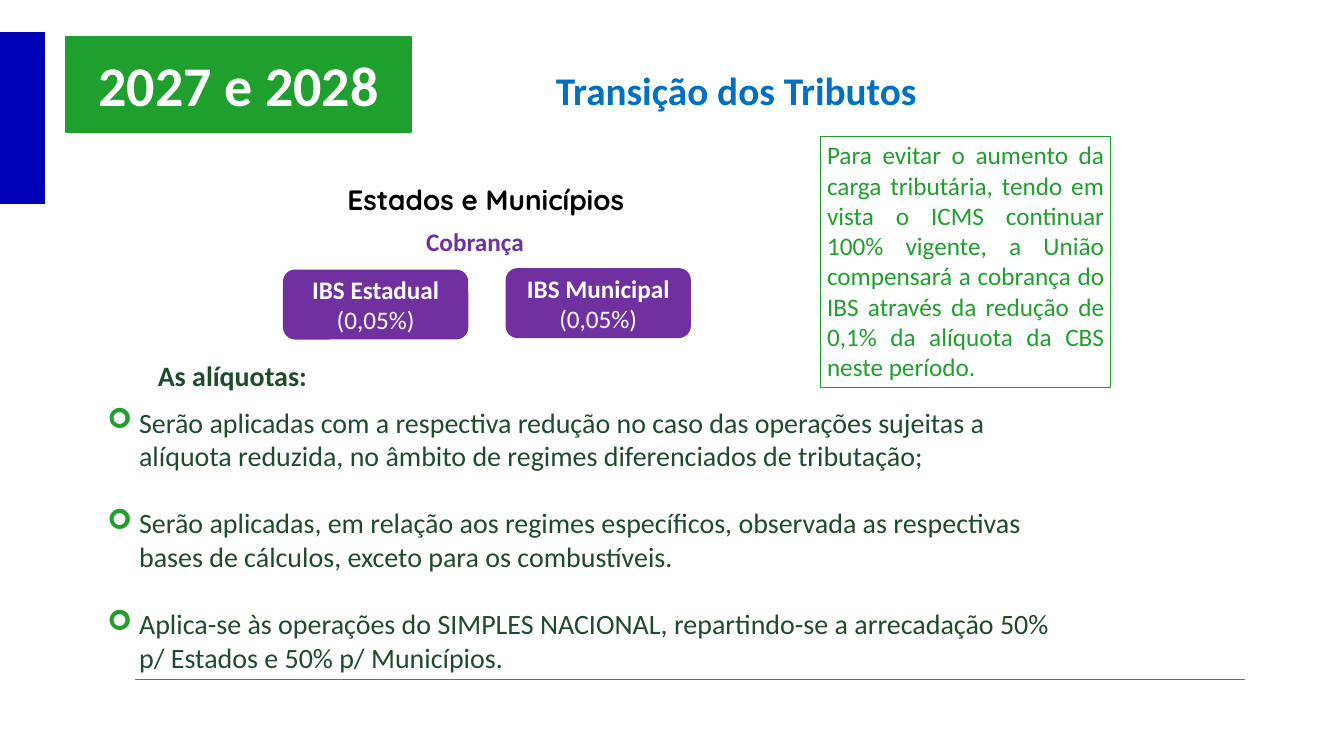
from dataclasses import dataclass
from lxml.etree import SubElement as Sub
from pptx import Presentation as Deck
from pptx.dml.color import RGBColor as RGB
from pptx.enum.shapes import MSO_CONNECTOR as Conn, MSO_SHAPE as Kind
from pptx.enum.text import MSO_ANCHOR as Anchor, PP_ALIGN as Align
from pptx.oxml.ns import qn
from pptx.util import Pt


@dataclass(frozen=True)
class Theme:
    green: str = "1F9F2D"
    dark: str = "1F4B2D"
    blue: str = "0070C0"
    navy: str = "0000B7"
    purple: str = "7030A0"
    white: str = "FFFFFF"
    black: str = "000000"
    font: str = "Calibri"
    round: str = "Quicksand"
    huge: int = 60
    large: int = 42
    body: int = 30
    small: int = 27


T = Theme()


def tint(hue):
    return RGB.from_string(hue)


def write(shape, *lines, size=T.body, hue=T.dark, font=T.font, bold=False,
          align=Align.LEFT, anchor=Anchor.TOP, rest="", gap=0, mark=None):
    frame = shape.text_frame
    frame.word_wrap = True
    frame.vertical_anchor = anchor
    for i, line in enumerate(lines):
        par = frame.add_paragraph() if i else frame.paragraphs[0]
        par.alignment = align
        if i and gap:
            par.space_before = Pt(gap)
        for part, heavy in ((line, bold), (rest, False)):
            if part:
                run = par.add_run()
                run.text = part
                face = run.font
                face.name, face.size, face.bold = font, Pt(size), heavy
                face.color.rgb = tint(hue)
        if mark:
            props = par._p.get_or_add_pPr()
            props.set("marL", str(Pt(34)))
            props.set("indent", str(-Pt(34)))
            shade = Sub(props, qn("a:buClr"))
            Sub(shade, qn("a:srgbClr"), val=T.green)
            Sub(props, qn("a:buFont"), typeface="Wingdings")
            Sub(props, qn("a:buChar"), char=mark)


def label(slide, x, y, w, h, *lines, **style):
    box = slide.shapes.add_textbox(Pt(x), Pt(y), Pt(w), Pt(h))
    write(box, *lines, **style)


def block(slide, x, y, w, h, kind=Kind.RECTANGLE, fill=None, edge=None, width=1):
    shape = slide.shapes.add_shape(kind, Pt(x), Pt(y), Pt(w), Pt(h))
    shape.shadow.inherit = False
    if fill:
        shape.fill.solid()
        shape.fill.fore_color.rgb = tint(fill)
    else:
        shape.fill.background()
    if edge:
        shape.line.color.rgb = tint(edge)
        shape.line.width = Pt(width)
    else:
        shape.line.fill.background()
    return shape


def rule(slide, x, y, w):
    line = slide.shapes.add_connector(Conn.STRAIGHT, Pt(x), Pt(y), Pt(x + w), Pt(y))
    line.line.color.rgb = tint(T.green)
    line.line.width = Pt(0.75)
    Sub(line._element.spPr, qn("a:effectLst"))


def head(slide, x, y):
    block(slide, x, y, 48, 184, fill=T.navy)
    badge = block(slide, x + 71, y + 5.5, 369.5, 101, fill=T.green, edge=T.green, width=2)
    write(badge, "2027 e 2028", size=T.huge, hue=T.white, bold=True,
          align=Align.CENTER, anchor=Anchor.MIDDLE)
    label(slide, x + 464.5, y + 33, 649, 58, "Transição dos Tributos",
          size=T.large, hue=T.blue, bold=True, align=Align.CENTER)


def levy(slide, x, y):
    label(slide, x + 61, y, 325, 44, "Estados e Municípios",
          hue=T.black, font=T.round, bold=True)
    label(slide, x + 145.5, y + 47.5, 240, 40, "Cobrança",
          size=T.small, hue=T.purple, bold=True)
    for name, dx, dy in (("IBS Estadual ", 0, 98), ("IBS Municipal ", 238.5, 96.5)):
        card = block(slide, x + dx, y + dy, 197, 73.5, Kind.ROUNDED_RECTANGLE,
                     T.purple, T.purple, 1.5)
        write(card, name, rest="(0,05%)", size=T.small, hue=T.white, bold=True,
              align=Align.CENTER, anchor=Anchor.MIDDLE)


def note(slide, x, y, w, h):
    box = block(slide, x, y, w, h, edge=T.green, width=0.75)
    write(box, "Para evitar o aumento da carga tributária, tendo em vista o ICMS "
          "continuar 100% vigente, a União compensará a cobrança do IBS através da "
          "redução de 0,1% da alíquota da CBS neste período.",
          size=T.small, hue=T.green, align=Align.JUSTIFY)


def rates(slide, x, y, w):
    label(slide, x + 54, y, 240, 44, "As alíquotas:", bold=True)
    label(slide, x, y + 49.5, w, 330,
          "Serão aplicadas com a respectiva redução no caso das operações sujeitas a "
          "alíquota reduzida, no âmbito de regimes diferenciados de tributação;",
          "Serão aplicadas, em relação aos regimes específicos, observada as "
          "respectivas bases de cálculos, exceto para os combustíveis.",
          "Aplica-se às operações do SIMPLES NACIONAL, repartindo-se a arrecadação "
          "50% p/ Estados e 50% p/ Municípios.",
          gap=36, mark="➢")


def main():
    deck = Deck()
    deck.slide_width, deck.slide_height = Pt(1440), Pt(810)
    slide = deck.slides.add_slide(deck.slide_layouts[6])
    rule(slide, 145, 728, 1188.5)
    head(slide, 0, 34.5)
    levy(slide, 304, 191.5)
    note(slide, 879, 146, 311, 269)
    rates(slide, 108, 381, 1030)
    deck.save("out.pptx")


if __name__ == "__main__":
    main()
